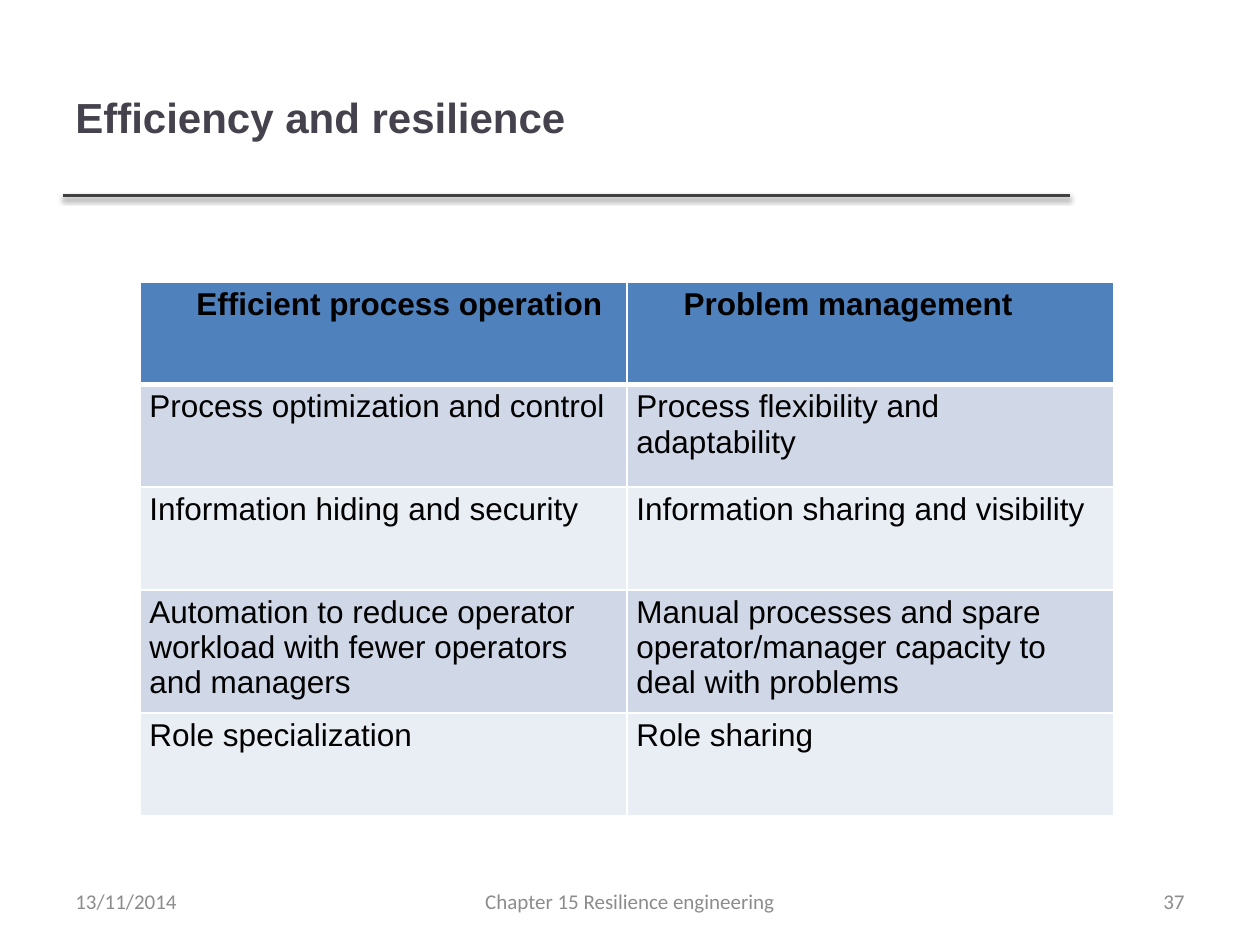
"""Builds the slide on efficiency and resilience."""
from lxml import etree
from pptx import Presentation
from pptx.dml.color import RGBColor
from pptx.enum.shapes import MSO_CONNECTOR
from pptx.enum.text import MSO_ANCHOR, PP_ALIGN
from pptx.util import Cm, Pt

STRAIGHT = MSO_CONNECTOR.STRAIGHT
MIDDLE = MSO_ANCHOR.MIDDLE
LEFT, CENTER, RIGHT, JUSTIFY = PP_ALIGN.LEFT, PP_ALIGN.CENTER, PP_ALIGN.RIGHT, PP_ALIGN.JUSTIFY
NAMESPACE = "http://schemas.openxmlformats.org/drawingml/2006/main"

COLORS = {"title": "46424D", "rule": "404040", "footer": "8C8C8C", "text": "000000",
          "header": "4F81BD", "odd": "D0D8E8", "even": "E9EDF4", "border": "FFFFFF"}

TITLE = "Efficiency and resilience"
FOOTERS = [
    ("13/11/2014", 1.27, 5.93, LEFT),
    ("Chapter 15 Resilience engineering", 8.68, 8.04, CENTER),
    ("37", 18.2, 5.93, RIGHT),
]
ROWS = [
    ("Efficient process operation", "Problem management"),
    ("Process optimization and control", "Process flexibility and adaptability"),
    ("Information hiding and security", "Information sharing and visibility"),
    ("Automation to reduce operator workload with fewer operators and managers",
     "Manual processes and spare operator/manager capacity to deal with problems"),
    ("Role specialization", "Role sharing"),
]
COLUMN_WIDTH, ROW_HEIGHT = 9.82, 2.07


def style(para, font_name, size, color, bold=False, align=LEFT):
    para.alignment = align
    for span in para.runs:
        span.font.name = font_name
        span.font.size = Pt(size)
        span.font.bold = bold
        span.font.color.rgb = RGBColor.from_string(COLORS[color])


def add_text(page, text, left, top, width, height, **look):
    box = page.shapes.add_textbox(Cm(left), Cm(top), Cm(width), Cm(height))
    frame = box.text_frame
    frame.word_wrap = True
    frame.vertical_anchor = MIDDLE
    frame.text = text
    style(frame.paragraphs[0], **look)


def add_rule(page):
    rule = page.shapes.add_connector(STRAIGHT, Cm(1.27), Cm(3.94), Cm(21.56), Cm(3.94))
    rule.line.color.rgb = RGBColor.from_string(COLORS["rule"])
    rule.line.width = Pt(2)
    rule._element.spPr.append(etree.fromstring(
        f'<a:effectLst xmlns:a="{NAMESPACE}"><a:outerShdw blurRad="{Pt(3.1)}" '
        f'dist="{Pt(1.6)}" dir="5400000" rotWithShape="0"><a:srgbClr val="000000">'
        '<a:alpha val="38000"/></a:srgbClr></a:outerShdw></a:effectLst>'))


def add_borders(cell, widths):
    properties = cell._tc.get_or_add_tcPr()
    for position, (side, width) in enumerate(widths.items()):
        properties.insert(position, etree.fromstring(
            f'<a:ln{side} xmlns:a="{NAMESPACE}" w="{Pt(width)}"><a:solidFill>'
            f'<a:srgbClr val="{COLORS["border"]}"/></a:solidFill></a:ln{side}>'))


def add_comparison(page):
    columns = len(ROWS[0])
    table = page.shapes.add_table(len(ROWS), columns, Cm(2.82), Cm(5.68),
                                  Cm(COLUMN_WIDTH * columns),
                                  Cm(ROW_HEIGHT * len(ROWS))).table
    for column in table.columns:
        column.width = Cm(COLUMN_WIDTH)
    for row, texts in enumerate(ROWS):
        table.rows[row].height = Cm(ROW_HEIGHT)
        is_header = row == 0
        fill = "header" if is_header else ("even", "odd")[row % 2]
        for column, text in enumerate(texts):
            cell = table.cell(row, column)
            cell.text = text
            cell.margin_left = cell.margin_right = Cm(0.19)
            cell.margin_top = cell.margin_bottom = Cm(0.1)
            cell.fill.solid()
            cell.fill.fore_color.rgb = RGBColor.from_string(COLORS[fill])
            add_borders(cell, {"L": 1, "R": 1, "T": 3 if row == 1 else 1,
                               "B": 3 if is_header else 1})
            para = cell.text_frame.paragraphs[0]
            style(para, "Arial", 18, "text", is_header, JUSTIFY if is_header else LEFT)
            if is_header:
                para._p.get_or_add_pPr().set("indent", str(Cm(0.95)))


def main():
    deck = Presentation()
    deck.slide_width, deck.slide_height = Cm(25.4), Cm(19.05)
    page = deck.slides.add_slide(deck.slide_layouts[6])
    add_rule(page)
    add_text(page, TITLE, 1.27, 0.76, 20.27, 3.18,
             font_name="Arial", size=24, color="title", bold=True)
    for text, left, width, align in FOOTERS:
        add_text(page, text, left, 17.65, width, 1.02,
                 font_name="Calibri", size=12, color="footer", align=align)
    add_comparison(page)
    deck.save("out.pptx")


if __name__ == "__main__":
    main()
